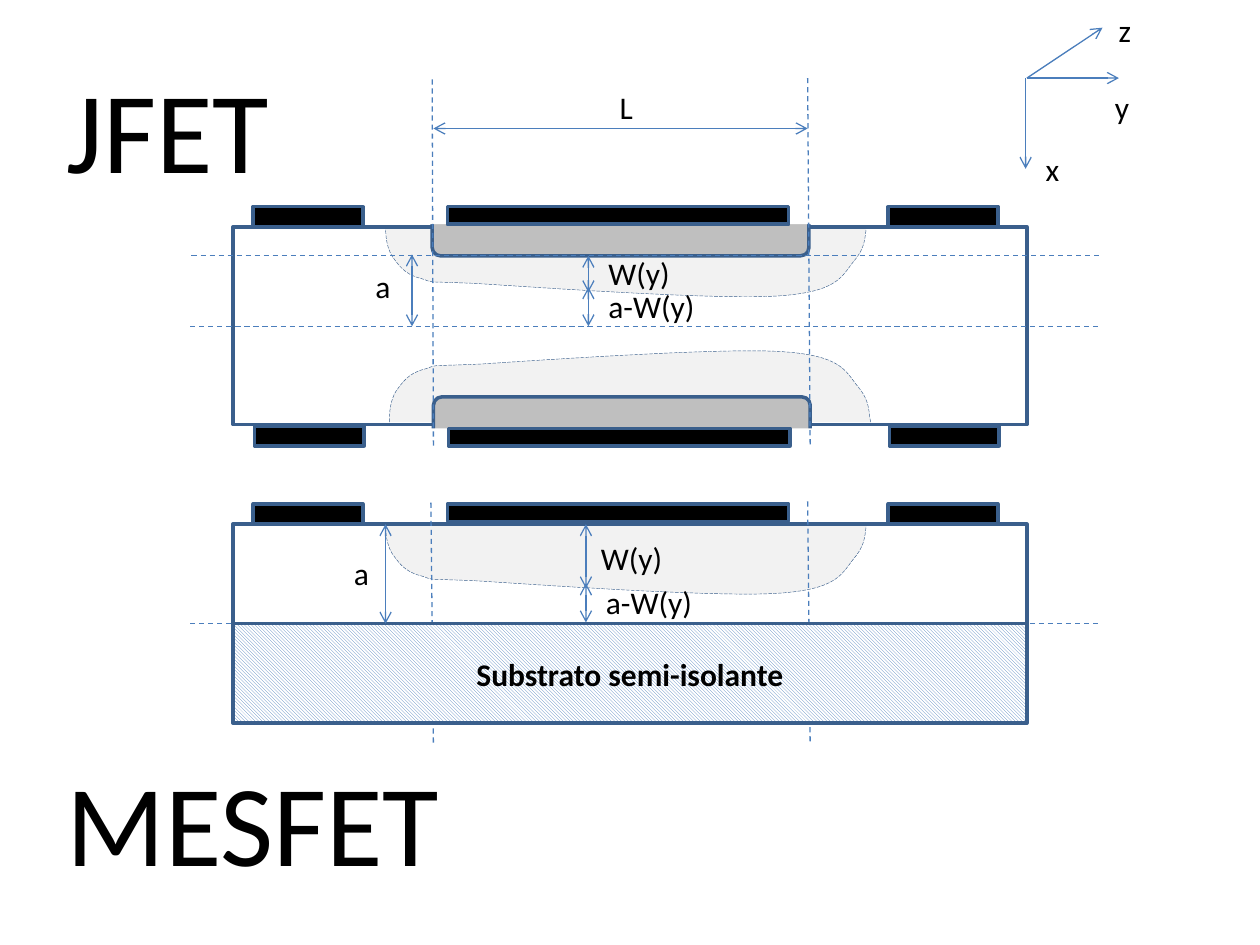
from lxml import etree
from pptx import Presentation
from pptx.dml.color import RGBColor
from pptx.enum import dml, shapes, text
from pptx.oxml.ns import qn
from pptx.util import Inches, Pt

COLORS = {key: RGBColor.from_string(value) for key, value in {
    "outline": "3A5F8C", "line": "4B7EBC", "hatch": "4F81BD", "white": "FFFFFF",
    "contact": "000000", "gate": "BFBFBF", "depletion": "F2F2F2", "text": "000000",
}.items()}

deck = Presentation()
deck.slide_width, deck.slide_height = Inches(10), Inches(7.5)
slide = deck.slides.add_slide(deck.slide_layouts[6])


def add_box(left, top, width, height, fill=None, outlined=True,
            kind=shapes.MSO_SHAPE.RECTANGLE):
    box = slide.shapes.add_shape(
        kind, Inches(left), Inches(top), Inches(width), Inches(height))
    box.shadow.inherit = False
    if fill:
        box.fill.solid()
        box.fill.fore_color.rgb = COLORS[fill]
    else:
        box.fill.background()
    if outlined:
        box.line.color.rgb = COLORS["outline"]
        box.line.width = Pt(2)
    else:
        box.line.fill.background()
    return box


def add_line(x1, y1, x2, y2, dashed=False, ends=()):
    """Draw a thin line; ends names the arrowheads, headEnd and/or tailEnd."""
    line = slide.shapes.add_connector(
        shapes.MSO_CONNECTOR.STRAIGHT, Inches(x1), Inches(y1), Inches(x2), Inches(y2))
    line.line.color.rgb = COLORS["line"]
    line.line.width = Pt(0.75)
    if dashed:
        line.line.dash_style = dml.MSO_LINE.DASH
    properties = line._element.spPr
    for end in ends:
        etree.SubElement(properties.find(qn("a:ln")), qn(f"a:{end}"), type="arrow")
    etree.SubElement(properties, qn("a:effectLst"))


BOTH = ("headEnd", "tailEnd")
MESFET_SHIFT = 2.36   # from the JFET's upper surface to the MESFET's
MIRROR = 5.18         # sum of a JFET height and its mirrored height
BODY_LEFT, BODY_WIDTH, BODY_HEIGHT = 1.85, 6.3, 1.57
CONTACTS = [(2.01, 1.64, 0.87, 0.16), (7.05, 1.64, 0.87, 0.16)]
GATE_CONTACT = (3.55, 1.64, 2.71, 0.14)

# Edge of the depletion region: start point, then three points per Bezier curve
EDGE = [(3.06, 1.79),
        (3.06, 1.88), (3.07, 1.96), (3.11, 2.03),
        (3.16, 2.10), (3.21, 2.18), (3.34, 2.21),
        (3.47, 2.25), (3.31, 2.23), (3.78, 2.25),
        (4.25, 2.28), (5.66, 2.38), (6.16, 2.35),
        (6.66, 2.32), (6.68, 2.19), (6.78, 2.07),
        (6.88, 1.95), (6.86, 1.87), (6.88, 1.79)]

# Depletion regions: lower JFET, upper JFET, MESFET
for shift_x, shift_y, sign in ((0.03, 5.14, -1), (0, 0, 1), (0, MESFET_SHIFT, 1)):
    points = [(Inches(x + shift_x), Inches(shift_y + sign * y)) for x, y in EDGE]
    builder = slide.shapes.build_freeform(*points[0])
    builder.add_line_segments(points[3::3], close=False)
    region = builder.convert_to_shape()
    # Turn each straight segment into a curve through its control points
    segments = list(region._element.iter(qn("a:lnTo")))
    for index, segment in enumerate(segments):
        curve = etree.Element(qn("a:cubicBezTo"))
        for x, y in points[3 * index + 1:3 * index + 4]:
            etree.SubElement(curve, qn("a:pt"),
                             x=str(x - region.left), y=str(y - region.top))
        segment.getparent().replace(segment, curve)
    region.shadow.inherit = False
    region.fill.solid()
    region.fill.fore_color.rgb = COLORS["depletion"]
    region.line.color.rgb = COLORS["outline"]
    region.line.width = Pt(0.25)
    region.line.dash_style = dml.MSO_LINE.LONG_DASH

# JFET: body, then the upper gate side and its mirror image
add_box(BODY_LEFT, 1.8, BODY_WIDTH, BODY_HEIGHT)
gate_parts = [((3.43, 1.64, 2.99, 0.39), "gate", True, shapes.MSO_SHAPE.ROUNDED_RECTANGLE)]
gate_parts += [(place, "contact", True, shapes.MSO_SHAPE.RECTANGLE) for place in CONTACTS]
gate_parts += [((3.27, 1.47, 3.31, 0.31), "white", False, shapes.MSO_SHAPE.RECTANGLE),
               (GATE_CONTACT, "contact", True, shapes.MSO_SHAPE.RECTANGLE)]
for mirrored in (False, True):
    for (left, top, width, height), fill, outlined, kind in gate_parts:
        if mirrored:
            left, top = left + 0.01, MIRROR - top - height
        add_box(left, top, width, height, fill, outlined, kind)

# MESFET body and contacts
add_box(BODY_LEFT, 4.16, BODY_WIDTH, BODY_HEIGHT)
for left, top, width, height in CONTACTS + [GATE_CONTACT]:
    add_box(left, top + MESFET_SHIFT, width, height, "contact")

# Dashed guides
for left, y in ((1.52, 2.03), (1.51, 2.59), (1.51, 4.95)):
    add_line(left, y, left + 7.23, y, dashed=True)
for x1, top, x2, bottom in ((3.43, 0.63, 3.44, 3.54), (6.41, 0.62, 6.43, 3.54),
                            (3.42, 3.99, 3.44, 5.91), (6.41, 3.98, 6.43, 5.9)):
    add_line(x1, top, x2, bottom, dashed=True)

substrate = add_box(BODY_LEFT, 4.95, BODY_WIDTH, 0.79)
substrate.fill.patterned()
substrate.fill.pattern = dml.MSO_PATTERN.LIGHT_DOWNWARD_DIAGONAL
substrate.fill.fore_color.rgb = COLORS["hatch"]
substrate.fill.back_color.rgb = COLORS["white"]
substrate.text_frame.text = "Substrato semi-isolante"
substrate.text_frame.vertical_anchor = text.MSO_ANCHOR.MIDDLE
para = substrate.text_frame.paragraphs[0]
para.alignment = text.PP_ALIGN.CENTER
span = para.runs[0]
span.font.name, span.font.size, span.font.bold = "Calibri", Pt(18), True
span.font.color.rgb = COLORS["text"]

# Dimension arrows
add_line(3.44, 1.02, 6.41, 1.02, ends=BOTH)
for x, top, bottom in ((3.27, 2.02, 2.59), (4.67, 2.03, 2.32), (4.67, 2.28, 2.59),
                       (3.06, 4.16, 4.95), (4.65, 4.16, 4.67), (4.65, 4.63, 4.94)):
    add_line(x, top, x, bottom, ends=BOTH)

# Coordinate axes y, x, z
for start, x, y in ((8.15, 8.88, 0.62), (8.14, 8.14, 1.34), (8.15, 8.75, 0.22)):
    add_line(start, 0.62, x, y, ends=("tailEnd",))

for label, left, top, width, height, size in (
        ("JFET", 0.43, 0.41, 1.83, 1.21, 66),
        ("MESFET", 0.43, 5.91, 3.19, 1.21, 66),
        ("L", 4.82, 0.65, 0.31, 0.4, 18),
        ("a", 2.88, 2.07, 0.32, 0.4, 18),
        ("a", 2.71, 4.35, 0.32, 0.4, 18),
        ("W(y)", 4.73, 1.97, 0.69, 0.4, 18),
        ("a-W(y)", 4.73, 2.23, 0.89, 0.4, 18),
        ("W(y)", 4.67, 4.23, 0.69, 0.4, 18),
        ("a-W(y)", 4.71, 4.58, 0.89, 0.4, 18),
        ("y", 8.75, 0.65, 0.32, 0.4, 18),
        ("x", 8.2, 1.14, 0.32, 0.4, 18),
        ("z", 8.78, 0.04, 0.3, 0.4, 18)):
    box = slide.shapes.add_textbox(Inches(left), Inches(top), Inches(width), Inches(height))
    box.text_frame.text = label
    box.text_frame.word_wrap = False
    box.text_frame.auto_size = text.MSO_AUTO_SIZE.SHAPE_TO_FIT_TEXT
    span = box.text_frame.paragraphs[0].runs[0]
    span.font.name, span.font.size = "Calibri", Pt(size)
    span.font.color.rgb = COLORS["text"]

deck.save("out.pptx")
